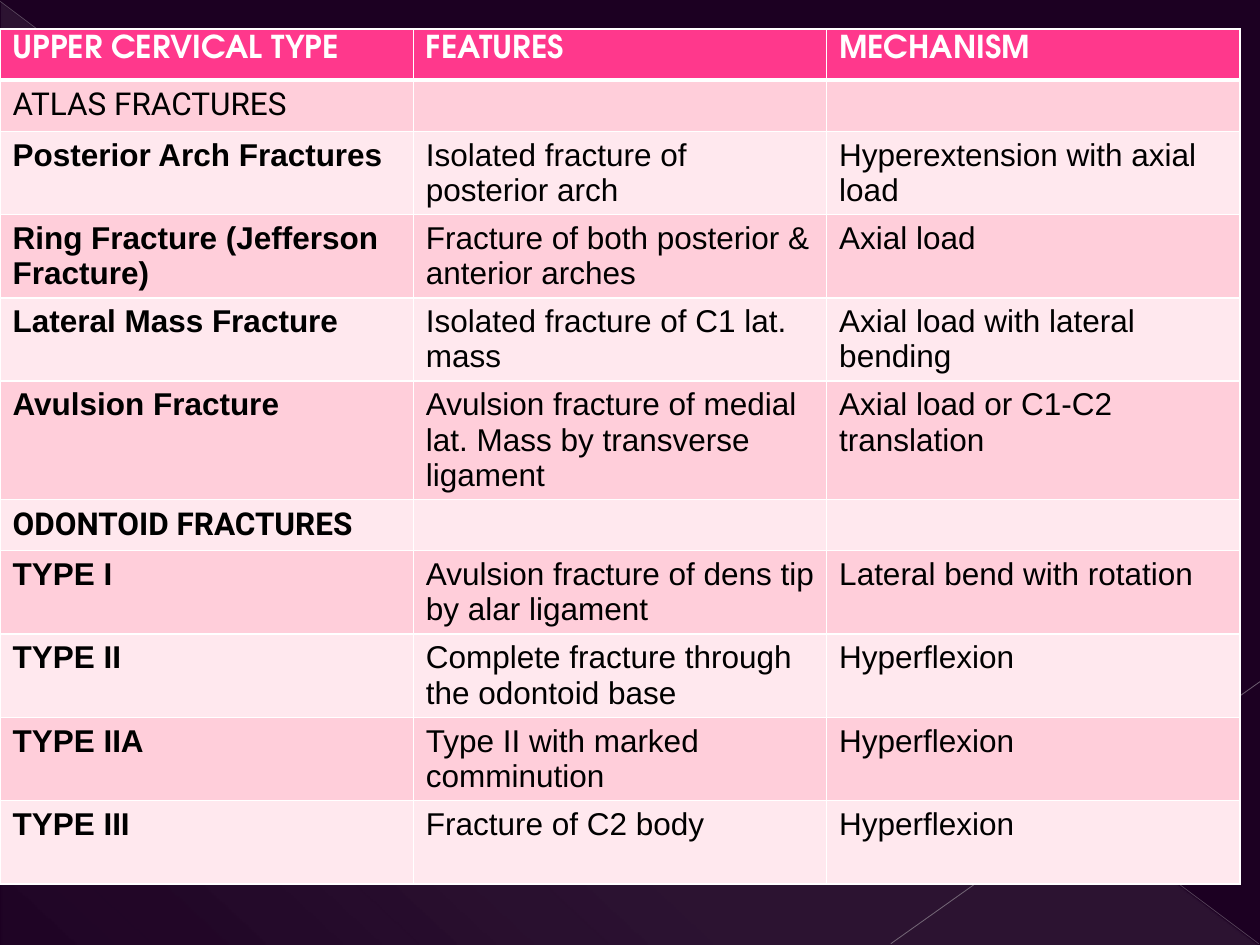
from lxml import etree
from pptx import Presentation
from pptx.dml.color import RGBColor
from pptx.enum.shapes import MSO_CONNECTOR, MSO_SHAPE
from pptx.oxml import parse_xml
from pptx.oxml.ns import qn
from pptx.util import Pt

LINE = MSO_CONNECTOR.STRAIGHT
WEDGE = MSO_SHAPE.RIGHT_TRIANGLE
NS = 'xmlns:a="http://schemas.openxmlformats.org/drawingml/2006/main"'

BACK, HEAD, BANDS = "1C0022", "FF388C", ("FFCEDA", "FFE8EE")
WHITE, BLACK = "FFFFFF", "000000"
SHADE = [(0, 10), (70, 8), (100, 1)]
LINES = [
    ((0, 0.72), (719.28, 539.28), "BFBFBF", 0.39, 35),
    ((720, 389.52), (509.04, 539.28), "C6C6C6", 0.47, 45),
]
TITLES = ("UPPER CERVICAL TYPE", "FEATURES", "MECHANISM")
GROUPS = [
    ("ATLAS FRACTURES", False, [
        ("Posterior Arch Fractures", "Isolated fracture of posterior arch",
         "Hyperextension with axial load", 2),
        ("Ring Fracture (Jefferson Fracture)",
         "Fracture of both posterior & anterior arches", "Axial load", 2),
        ("Lateral Mass Fracture", "Isolated fracture of C1 lat. mass",
         "Axial load with lateral bending", 2),
        ("Avulsion Fracture",
         "Avulsion fracture of medial lat. Mass by transverse ligament",
         "Axial load or C1-C2 translation", 3),
    ]),
    ("ODONTOID FRACTURES", True, [
        ("TYPE I", "Avulsion fracture of dens tip by alar ligament",
         "Lateral bend with rotation", 2),
        ("TYPE II", "Complete fracture through the odontoid base",
         "Hyperflexion", 2),
        ("TYPE IIA", "Type II with marked comminution", "Hyperflexion", 2),
        ("TYPE III", "Fracture of C2 body", "Hyperflexion", 2),
    ]),
]
HEIGHTS = {1: 29.2, 2: 47.6, 3: 67.7}
LEFT, TOP, WIDTH = 0, 16.6, 236.2


def color(code):
    return RGBColor.from_string(code)


def add_wedge(slide):
    wedge = slide.shapes.add_shape(WEDGE, Pt(0.72), Pt(1.44), Pt(718.56), Pt(538.56))
    wedge.shadow.inherit = False
    wedge.line.fill.background()
    stops = "".join(
        f'<a:gs pos="{pos * 1000}"><a:srgbClr val="D2D2D2">'
        f'<a:alpha val="{alpha * 1000}"/></a:srgbClr></a:gs>'
        for pos, alpha in SHADE)
    grad = parse_xml(f'<a:gradFill {NS} rotWithShape="1"><a:gsLst>{stops}</a:gsLst>'
                     f'<a:lin ang="{133 * 60000}" scaled="0"/></a:gradFill>')
    wedge.element.spPr.find(qn("a:prstGeom")).addnext(grad)


def add_line(slide, start, end, tint, width, alpha):
    line = slide.shapes.add_connector(LINE, *map(Pt, start + end))
    line.line.color.rgb = color(tint)
    line.line.width = Pt(width)
    props = line.element.spPr
    shade = next(props.iter(qn("a:srgbClr")))
    etree.SubElement(shade, qn("a:alpha")).set("val", str(alpha * 1000))
    etree.SubElement(props, qn("a:effectLst"))


def style_cell(cell, text, fill, font, tint, bold, edges):
    cell.fill.solid()
    cell.fill.fore_color.rgb = color(fill)
    props = cell._tc.get_or_add_tcPr()
    for spot, side in enumerate("LRTB"):
        width = edges.get(side, 1)
        props.insert(spot, parse_xml(
            f'<a:ln{side} {NS} w="{Pt(width)}"><a:solidFill>'
            f'<a:srgbClr val="{WHITE}"/></a:solidFill></a:ln{side}>'))
    para = cell.text_frame.paragraphs[0]
    if not text:
        para.font.size = Pt(18)
        return
    run = para.add_run()
    run.text = text
    run.font.name = font
    run.font.size = Pt(18)
    run.font.bold = bold
    run.font.color.rgb = color(tint)


def list_rows():
    rows = [(TITLES, 1, "TeX Gyre Adventor", (True, True, True))]
    for title, bold, items in GROUPS:
        rows.append(((title, "", ""), 1, "Roboto", (bold, False, False)))
        for *texts, count in items:
            rows.append((texts, count, "Arial", (True, False, False)))
    return rows


def add_grid(slide):
    rows = list_rows()
    total = sum(HEIGHTS[row[1]] for row in rows)
    grid = slide.shapes.add_table(len(rows), len(TITLES), Pt(LEFT), Pt(TOP),
                                  Pt(WIDTH * len(TITLES)), Pt(total)).table
    for col in grid.columns:
        col.width = Pt(WIDTH)
    for r, (texts, count, font, bolds) in enumerate(rows):
        grid.rows[r].height = Pt(HEIGHTS[count])
        fill = BANDS[(r - 1) % 2] if r else HEAD
        tint = BLACK if r else WHITE
        edges = {0: {"B": 3}, 1: {"T": 3}}.get(r, {})
        for c, (text, bold) in enumerate(zip(texts, bolds)):
            style_cell(grid.cell(r, c), text, fill, font, tint, bold, edges)


def main():
    deck = Presentation()
    deck.slide_width, deck.slide_height = Pt(720), Pt(540)
    slide = deck.slides.add_slide(deck.slide_layouts[6])
    slide.background.fill.solid()
    slide.background.fill.fore_color.rgb = color(BACK)
    add_wedge(slide)
    for line in LINES:
        add_line(slide, *line)
    add_grid(slide)
    deck.save("out.pptx")


if __name__ == "__main__":
    main()
